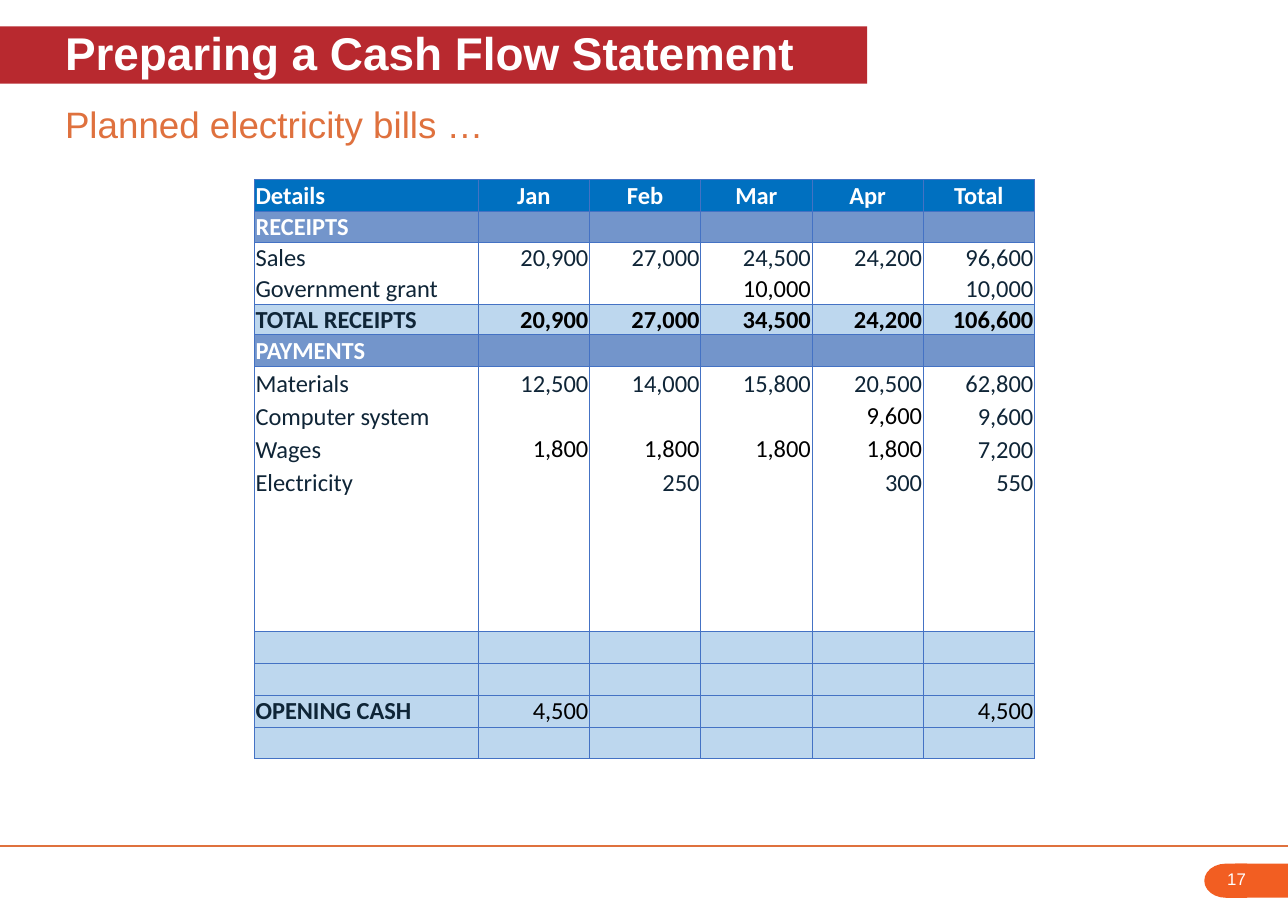
import pptx
import pptx.dml.color
import pptx.enum.shapes
import pptx.enum.text
import pptx.oxml.ns
import pptx.util
from lxml import etree

Inches = pptx.util.Inches
Pt = pptx.util.Pt
qn = pptx.oxml.ns.qn
SHAPE = pptx.enum.shapes.MSO_SHAPE
ALIGN = pptx.enum.text.PP_ALIGN
ANCHOR = pptx.enum.text.MSO_ANCHOR

WHITE, BLACK, NAVY = "FFFFFF", "000000", "0F2537"
ORANGE, BORDER = "DF713E", "4472C4"
HEADER, SECTION, SUMMARY = "0070C0", "7395CB", "BDD7EE"


def rgb(value):
    return pptx.dml.color.RGBColor.from_string(value)


def write(para, text, size, color, font="Arial", bold=False):
    span = para.add_run()
    span.text = text
    span.font.size = Pt(size)
    span.font.name = font
    span.font.bold = bold
    span.font.color.rgb = rgb(color)


deck = pptx.Presentation()
deck.slide_width, deck.slide_height = Inches(11.69), Inches(8.27)
page = deck.slides.add_slide(deck.slide_layouts[5])

# Footer
rule = page.shapes.add_connector(
    pptx.enum.shapes.MSO_CONNECTOR.STRAIGHT,
    Inches(0), Inches(7.68), Inches(11.69), Inches(7.68))
rule.line.color.rgb = rgb(ORANGE)
rule.line.width = Pt(0.75)
etree.SubElement(rule._element.spPr, qn("a:effectLst"))

for preset, left, width, turn in (
        (SHAPE.FLOWCHART_DELAY, 10.93, 0.39, 180),
        (SHAPE.RECTANGLE, 11.21, 0.48, 0)):
    tab = page.shapes.add_shape(
        preset, Inches(left), Inches(7.84), Inches(width), Inches(0.31))
    tab.rotation = turn
    tab.shadow.inherit = False
    tab.fill.solid()
    tab.fill.fore_color.rgb = rgb("F25E22")
    tab.line.fill.background()

number = page.shapes.add_textbox(
    Inches(11.04), Inches(7.84), Inches(0.56), Inches(0.28))
number.text_frame.word_wrap = True
write(number.text_frame.paragraphs[0], "17", 11, WHITE)

# Headings
title = page.shapes.title
title.left, title.top = Inches(0), Inches(0.24)
title.width, title.height = Inches(7.87), Inches(0.52)
title.fill.solid()
title.fill.fore_color.rgb = rgb("B8292F")
subtitle = page.shapes.add_textbox(
    Inches(0), Inches(0.89), Inches(11.69), Inches(0.51))

for box, text, size, color, bold in (
        (title, "Preparing a Cash Flow Statement", 30, WHITE, True),
        (subtitle, "Planned electricity bills …", 24, ORANGE, False)):
    frame = box.text_frame
    frame.word_wrap = True
    frame.auto_size = pptx.enum.text.MSO_AUTO_SIZE.NONE
    frame.vertical_anchor = ANCHOR.MIDDLE
    frame.margin_left, frame.margin_right = Inches(0.59), Inches(0)
    frame.margin_top, frame.margin_bottom = Inches(0), Inches(0.05)
    frame.paragraphs[0].alignment = ALIGN.LEFT
    write(frame.paragraphs[0], text, size, color, bold=bold)

# Cash flow table: fill, row height, texts, columns set in black at the cell top
blank = [""] * 6
entries = [
    (HEADER, 0.29, ["Details", "Jan", "Feb", "Mar", "Apr", "Total"], []),
    (SECTION, 0.28, ["RECEIPTS"] + blank[1:], []),
    (WHITE, 0.28, ["Sales", "20,900", "27,000", "24,500", "24,200", "96,600"], []),
    (WHITE, 0.28, ["Government grant", "", "", "10,000", "", "10,000"], [3]),
    (SUMMARY, 0.28, ["TOTAL RECEIPTS", "20,900", "27,000", "34,500", "24,200",
                     "106,600"], range(1, 6)),
    (SECTION, 0.29, ["PAYMENTS"] + blank[1:], []),
    (WHITE, 0.3, ["Materials", "12,500", "14,000", "15,800", "20,500", "62,800"], []),
    (WHITE, 0.3, ["Computer system", "", "", "", "9,600", "9,600"], [4]),
    (WHITE, 0.3, ["Wages", "1,800", "1,800", "1,800", "1,800", "7,200"], range(1, 5)),
    (WHITE, 0.3, ["Electricity", "", "250", "", "300", "550"], []),
    *[(WHITE, 0.3, blank, [])] * 4,
    *[(SUMMARY, 0.29, blank, [])] * 2,
    (SUMMARY, 0.29, ["OPENING CASH", "4,500", "", "", "", "4,500"], range(1, 6)),
    (SUMMARY, 0.29, blank, []),
]
table = page.shapes.add_table(
    len(entries), 6, Inches(2.31), Inches(1.63), Inches(7.08), Inches(5.26)).table
table.first_row = table.horz_banding = False
for index, column in enumerate(table.columns):
    column.width = Inches(1.01 if index else 2.03)

fills = [entry[0] for entry in entries]
for row, (fill, height, texts, black_columns) in enumerate(entries):
    table.rows[row].height = Inches(height)
    top_open = fill == WHITE and fills[row - 1] == WHITE
    bottom_open = fill == WHITE and fills[row + 1] == WHITE
    for col, text in enumerate(texts):
        cell = table.cell(row, col)
        cell.margin_left = cell.margin_right = cell.margin_top = Inches(0.01)
        cell.margin_bottom = Inches(0)
        black = col in black_columns
        cell.vertical_anchor = ANCHOR.TOP if black else ANCHOR.MIDDLE

        properties = cell._tc.get_or_add_tcPr()
        for side, is_open in (("L", False), ("R", False),
                              ("T", top_open), ("B", bottom_open)):
            edge = etree.SubElement(properties, qn("a:ln" + side), w=str(Pt(0.5)))
            if is_open:
                etree.SubElement(edge, qn("a:noFill"))
            else:
                paint = etree.SubElement(edge, qn("a:solidFill"))
                etree.SubElement(paint, qn("a:srgbClr"), val=BORDER)
        cell.fill.solid()
        cell.fill.fore_color.rgb = rgb(fill)

        para = cell.text_frame.paragraphs[0]
        if col:
            para.alignment = ALIGN.CENTER if fill == HEADER else ALIGN.RIGHT
        if text:
            color = WHITE if fill in (HEADER, SECTION) else BLACK if black else NAVY
            bold = fill != WHITE and (col == 0 or texts[0] != "OPENING CASH")
            write(para, text, 16, color, "Calibri", bold)
        else:
            etree.SubElement(para._p, qn("a:endParaRPr"), sz="1200")

deck.save("out.pptx")
